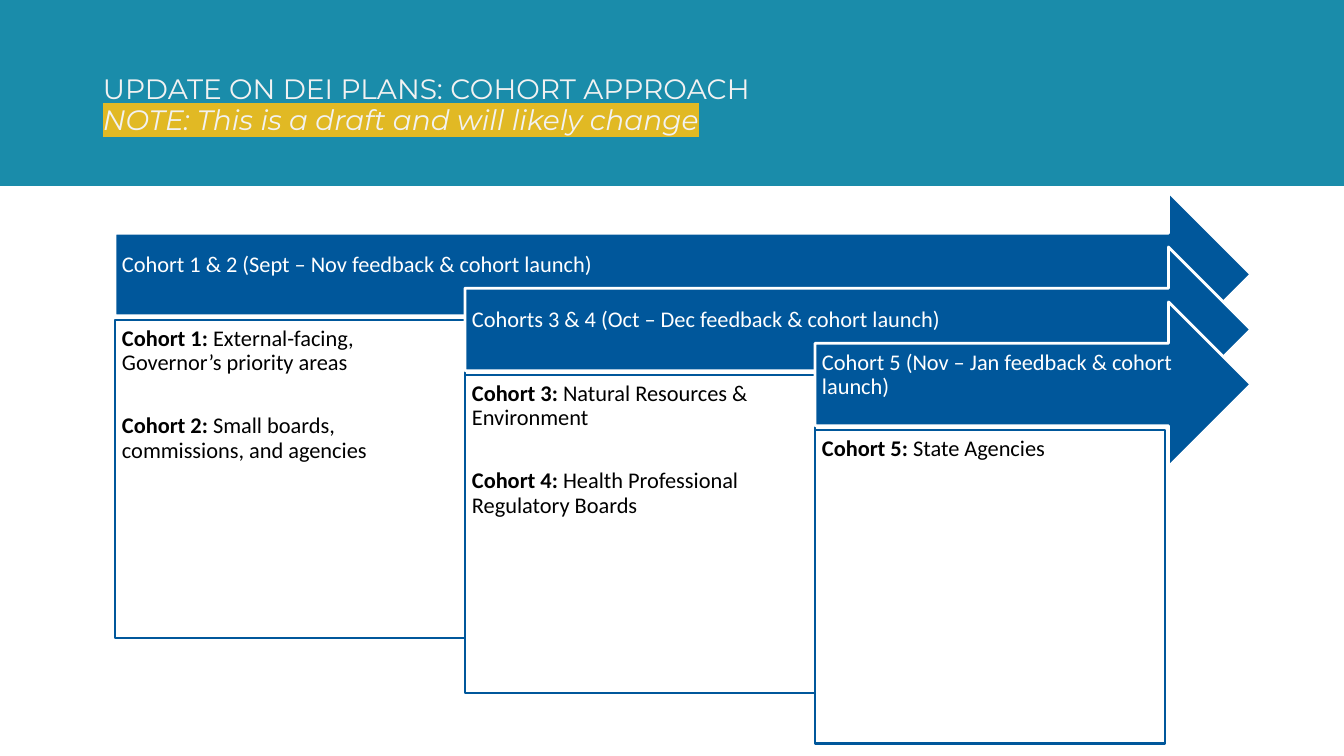
from lxml import etree
from pptx import Presentation
from pptx.dml.color import RGBColor
from pptx.enum.shapes import MSO_SHAPE as SHAPE
from pptx.enum.text import MSO_ANCHOR as ANCHOR, PP_ALIGN as ALIGN
from pptx.oxml.ns import qn
from pptx.util import Pt

COLORS = {"teal": "1A8CAA", "blue": "00579B", "white": "FFFFFF",
          "pale": "F2F2F2", "gold": "E1B924", "black": "000000"}
RGB = {name: RGBColor.from_string(code) for name, code in COLORS.items()}
SCALE = 12192000 / 1344


def px(*nums):
    """Turn whole pixels into a list of EMU lengths."""
    return [round(n * SCALE) for n in nums]


def block(kind, box, fill, line=None, insets=(7, 7, 7, 7), anchor=ANCHOR.TOP):
    """Add a filled shape and return its text frame."""
    shape = slide.shapes.add_shape(kind, *px(*box))
    shape.shadow.inherit = False
    shape.fill.solid()
    shape.fill.fore_color.rgb = RGB[fill]
    if line:
        shape.line.color.rgb = RGB[line]
        shape.line.width = Pt(2)
    else:
        shape.line.fill.background()
    frame = shape.text_frame
    frame.word_wrap = True
    frame.vertical_anchor = anchor
    (frame.margin_left, frame.margin_top,
     frame.margin_right, frame.margin_bottom) = px(*insets)
    return frame


prs = Presentation()
prs.slide_width, prs.slide_height = px(1344, 756)
slide = prs.slides.add_slide(prs.slide_layouts[6])

# Title band
block(SHAPE.RECTANGLE, (0, 0, 1344, 186), "teal")
title = slide.shapes.add_textbox(*px(93, 40, 983, 132)).text_frame
title.word_wrap = True
title.vertical_anchor = ANCHOR.MIDDLE
para = title.paragraphs[0]
para.line_spacing = 0.9
para.font.size = Pt(20)
para.font.name = "Montserrat"
para.font.color.rgb = RGB["pale"]
para.add_run().text = "UPDATE ON DEI PLANS: COHORT APPROACH"
para.add_line_break()
note = para.add_run()
note.text = "NOTE: This is a draft and will likely change"
note.font.italic = True
mark = etree.SubElement(note.font._element, qn("a:highlight"))
etree.SubElement(mark, qn("a:srgbClr"), val=COLORS["gold"])

# Staggered cohort arrows, each with a box below its left end
STAGES = [
    ("Cohort 1 & 2 (Sept – Nov feedback & cohort launch)", 318,
     [("Cohort 1: ", "External-facing, Governor’s priority areas"),
      ("Cohort 2: ", "Small boards, commissions, and agencies")]),
    ("Cohorts 3 & 4 (Oct – Dec feedback & cohort launch)", 318,
     [("Cohort 3: ", "Natural Resources & Environment"),
      ("Cohort 4: ", "Health Professional Regulatory Boards")]),
    ("Cohort 5 (Nov – Jan feedback & cohort launch)", 314,
     [("Cohort 5: ", "State Agencies")]),
]
RIGHT, WIDE = 1251, 350

for i, (head, tall, cohorts) in enumerate(STAGES):
    left, top = 115 + WIDE * i, 192 + 55 * i
    arrow = block(SHAPE.RIGHT_ARROW, (left, top, RIGHT - left, 165), "blue",
                  "white", (7, 7, 28, 26), ANCHOR.MIDDLE)
    body = block(SHAPE.RECTANGLE, (left, top + 128, WIDE, tall), "white", "blue")
    arrow.paragraphs[0].add_run().text = head
    for j, (label, text) in enumerate(cohorts):
        para = body.add_paragraph() if j else body.paragraphs[0]
        if j:
            para.space_before = Pt(28)
        name = para.add_run()
        name.text = label
        name.font.bold = True
        para.add_run().text = text
    for frame, color in ((arrow, "white"), (body, "black")):
        for para in frame.paragraphs:
            para.alignment = ALIGN.LEFT
            para.line_spacing = 0.9
            para.font.size = Pt(16)
            para.font.name = "Calibri"
            para.font.color.rgb = RGB[color]

prs.save("out.pptx")
